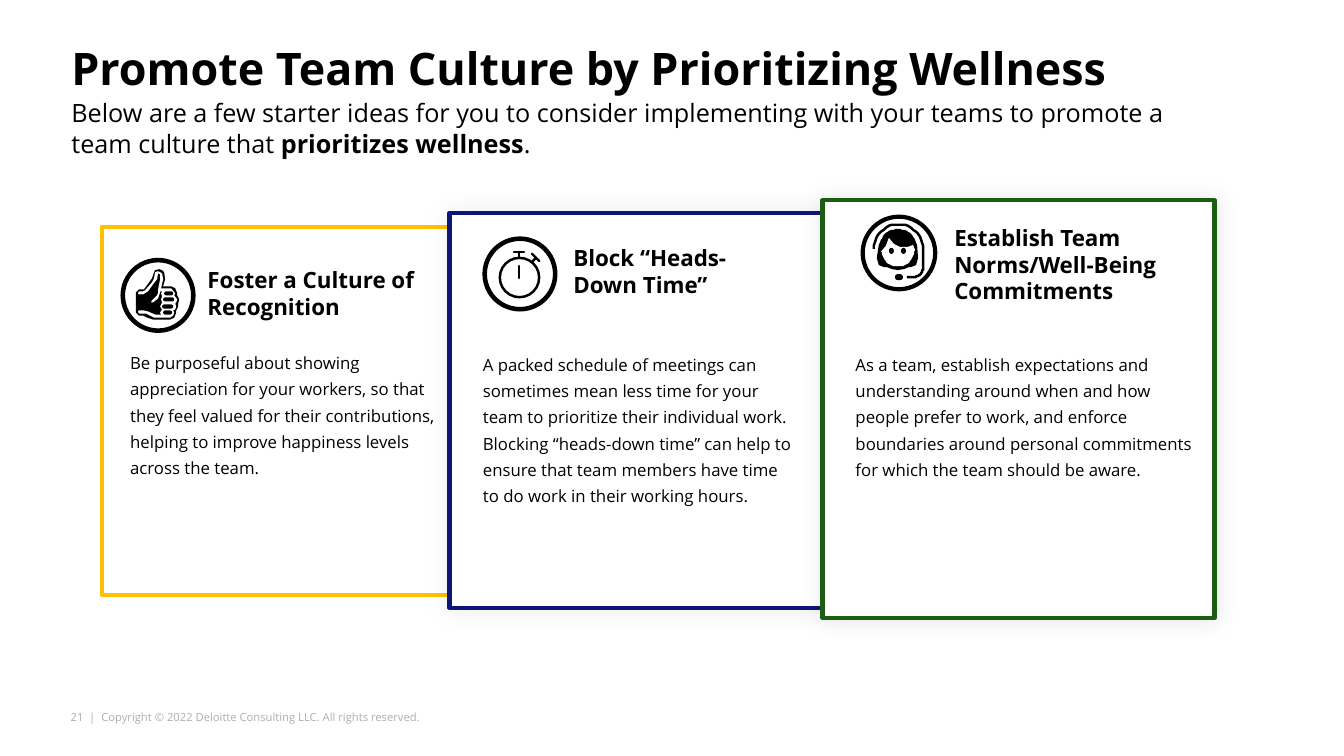
import math

import pptx
import pptx.dml.color
import pptx.enum.shapes
import pptx.oxml
import pptx.oxml.ns
import pptx.util

Cm = pptx.util.Cm
Pt = pptx.util.Pt
RGBColor = pptx.dml.color.RGBColor
SHAPE = pptx.enum.shapes.MSO_SHAPE

BLACK = RGBColor(0x00, 0x00, 0x00)
WHITE = RGBColor(0xFF, 0xFF, 0xFF)
GRAY = RGBColor(0xAE, 0xAE, 0xAE)
GOLD = RGBColor(0xFF, 0xC0, 0x00)
NAVY = RGBColor(0x0B, 0x16, 0x77)
GREEN = RGBColor(0x1B, 0x5D, 0x13)

FONT = "Open Sans"
UNIT = Cm(2.54) / 100  # icon grid step; each icon is 72 steps wide

HAND = [(55, 36), (55, 34), (53, 29), (49, 27), (41, 27), (43, 20), (42, 13),
        (40, 11), (37, 10), (33, 11), (32, 13), (30, 19), (28, 22), (22, 30),
        (17, 30), (14, 33), (14, 53), (17, 56), (21, 56), (25, 58), (31, 60),
        (48, 60), (52, 58), (54, 53), (54, 51), (56, 47), (56, 44), (57, 40)]
RIM = [(54, 43), (53, 44), (54, 47), (53, 50), (51, 51), (52, 53), (51, 56),
       (48, 58), (32, 58), (24, 54), (17, 54), (16, 52), (17, 51), (22, 51),
       (26, 52), (33, 55), (39, 55), (38, 53), (40, 50), (38, 47), (40, 43),
       (39, 40), (40, 37), (39, 34), (40, 32), (38, 32), (38, 33), (36, 39),
       (31, 43), (29, 43), (30, 41), (35, 36), (36, 33), (36, 30), (38, 20),
       (38, 15), (36, 14), (35, 20), (31, 25), (26, 32), (21, 35), (17, 35),
       (16, 34), (17, 32), (21, 32), (23, 31), (30, 23), (32, 19), (33, 13),
       (36, 12), (40, 14), (41, 20), (39, 29), (49, 29), (53, 34), (52, 36),
       (55, 40)]
NAILS = [(42, 32, 9, 4), (41, 38, 11, 4), (40, 45, 11, 4), (41, 51, 9, 4)]


def add_text(slide, box, parts, size, bold=False, color=BLACK, line=None,
             after=None, wrap=True):
    """Add one paragraph; every second part is bold when there are several."""
    frame = slide.shapes.add_textbox(*map(Cm, box)).text_frame
    frame.word_wrap = wrap
    frame.margin_left = frame.margin_right = 0
    frame.margin_top = frame.margin_bottom = 0
    para = frame.paragraphs[0]
    para.text = parts[0]
    for part in parts[1:]:
        para.add_run().text = part
    if line:
        para.line_spacing = line
    if after:
        para.space_after = Pt(after)
    for i, run in enumerate(para.runs):
        run.font.name = FONT
        run.font.size = Pt(size)
        run.font.bold = bold or i % 2 == 1
        run.font.color.rgb = color


def paint(shape, fill=None, edge=None, width=0):
    shape.shadow.inherit = False
    if fill is None:
        shape.fill.background()
    else:
        shape.fill.solid()
        shape.fill.fore_color.rgb = fill
    if edge is None:
        shape.line.fill.background()
    else:
        shape.line.color.rgb = edge
        shape.line.width = Pt(width)


def add_glow(shape, blur, alpha):
    """Give the shape a soft shadow with no offset; alpha is in percent."""
    space = pptx.oxml.ns.nsdecls("a")
    shade = pptx.oxml.parse_xml(
        f'<a:outerShdw {space} blurRad="{Pt(blur)}" dist="0" dir="0" '
        f'algn="ctr" rotWithShape="0"><a:srgbClr val="000000">'
        f'<a:alpha val="{alpha * 1000}"/></a:srgbClr></a:outerShdw>')
    shape.element.spPr.find(pptx.oxml.ns.qn("a:effectLst")).append(shade)


def add_card(slide, box, edge, glow):
    card = slide.shapes.add_shape(SHAPE.RECTANGLE, *map(Cm, box))
    paint(card, WHITE, edge, 3)
    if glow:
        add_glow(card, *glow)


def place(spot, x, y):
    """Turn a grid point of the icon at spot into slide lengths."""
    return Cm(spot[0]) + round(x * UNIT), Cm(spot[1]) + round(y * UNIT)


def add_part(slide, spot, kind, box, fill=BLACK, edge=None, width=0):
    x, y, w, h = box
    part = slide.shapes.add_shape(
        kind, *place(spot, x, y), round(w * UNIT), round(h * UNIT))
    if kind == SHAPE.ROUNDED_RECTANGLE:
        part.adjustments[0] = 0.5
    paint(part, fill, edge, width)


def add_ring(slide, spot, box, width):
    add_part(slide, spot, SHAPE.OVAL, box, None, BLACK, width)


def add_path(slide, spot, points, fill=None, width=0):
    """Draw a filled outline, or an open line when there is no fill."""
    form = slide.shapes.build_freeform(*points[0], scale=UNIT)
    form.add_line_segments(points[1:], close=fill is not None)
    shape = form.convert_to_shape(Cm(spot[0]), Cm(spot[1]))
    paint(shape, fill, None if fill is not None else BLACK, width)


def add_stroke(slide, spot, start, end):
    line = slide.shapes.add_connector(
        pptx.enum.shapes.MSO_CONNECTOR.STRAIGHT,
        *place(spot, *start), *place(spot, *end))
    line.line.color.rgb = BLACK
    line.line.width = Pt(1.75)
    props = line.element.spPr
    props.get_or_add_ln().set("cap", "rnd")
    props.append(pptx.oxml.parse_xml(
        f'<a:effectLst {pptx.oxml.ns.nsdecls("a")}/>'))


def arc(x, y, r, start, end):
    """List points on a circle, in degrees clockwise from the right."""
    turns = [math.radians(start + (end - start) * i / 24) for i in range(25)]
    return [(x + r * math.cos(t), y + r * math.sin(t)) for t in turns]


def draw_thumb(slide, spot):
    add_ring(slide, spot, (1, 1, 70, 70), 3.25)
    add_path(slide, spot, HAND, BLACK)
    add_path(slide, spot, RIM, WHITE)
    for nail in NAILS:
        add_part(slide, spot, SHAPE.ROUNDED_RECTANGLE, nail)


def draw_watch(slide, spot):
    add_ring(slide, spot, (1, 1, 70, 70), 3.25)
    add_ring(slide, spot, (16, 20, 39, 39), 1.75)
    for start, end in [((30, 14), (40, 14)), ((35, 14), (35, 20)),
                       ((35, 28), (35, 40)), ((48, 16), (55, 23)),
                       ((48, 24), (52, 20))]:
        add_stroke(slide, spot, start, end)


def draw_agent(slide, spot):
    add_ring(slide, spot, (0, 0, 72, 72), 3)
    band = arc(35.5, 32, 24.5, 180, 360) + arc(50, 50, 10, 0, 90) + [(44, 60)]
    add_path(slide, spot, band, width=1.75)
    hair = arc(35, 31, 19, 190, 350) + [
        (55, 41), (53, 48), (48, 50), (46, 50), (41, 52), (35, 53),
        (29, 52), (24, 50), (21, 50), (16, 48), (14, 41)]
    add_path(slide, spot, hair, BLACK)
    face = [(18, 35), (23, 29), (26, 21), (31, 27), (37, 30), (45, 30),
            (50, 28)] + arc(35, 33, 16.5, 0, 173)
    add_path(slide, spot, face, WHITE)
    for x in (26, 38):
        add_part(slide, spot, SHAPE.OVAL, (x, 31, 5, 6))
    add_part(slide, spot, SHAPE.ROUNDED_RECTANGLE, (32, 57, 8, 6))


CARDS = [
    ((2.57, 5.72, 9.25, 9.27), GOLD, None, draw_thumb, (3.07, 6.53),
     (5.23, 6.71, 5.44, 1.52), "Foster a Culture of Recognition",
     (3.28, 8.74, 7.85, 3.28),
     "Be purposeful about showing appreciation for your workers, so that they "
     "feel valued for their contributions, helping to improve happiness "
     "levels across the team."),
    ((11.33, 5.36, 9.53, 9.96), NAVY, (18, 7), draw_watch, (12.19, 5.99),
     (14.45, 6.15, 4.09, 1.52), "Block “Heads-Down Time”",
     (12.17, 8.79, 7.87, 3.94),
     "A packed schedule of meetings can sometimes mean less time for your "
     "team to prioritize their individual work. Blocking “heads-down time” "
     "can help to ensure that team members have time to do work in their "
     "working hours."),
    ((20.73, 5.05, 9.88, 10.52), GREEN, (16, 9), draw_agent, (21.74, 5.46),
     (24.05, 5.64, 6.25, 1.52), "Establish Team Norms/Well-Being Commitments",
     (21.56, 8.79, 8.61, 3.28),
     "As a team, establish expectations and understanding around when and how "
     "people prefer to work, and enforce boundaries around personal "
     "commitments for which the team should be aware."),
]


def main():
    deck = pptx.Presentation()
    deck.slide_width, deck.slide_height = Cm(33.87), Cm(19.05)
    slide = deck.slides.add_slide(deck.slide_layouts[6])
    add_text(slide, (1.78, 17.91, 8.86, 0.33),
             ["21  |  Copyright © 2022 Deloitte Consulting LLC. "
              "All rights reserved."], 8, color=GRAY, wrap=False)
    add_text(slide, (1.8, 2.46, 29.06, 1.55),
             ["Below are a few starter ideas for you to consider implementing "
              "with your teams to promote a team culture that ",
              "prioritizes wellness", "."], 18)
    add_text(slide, (1.8, 1.17, 28.37, 1.65),
             ["Promote Team Culture by Prioritizing Wellness"], 32, bold=True,
             line=0.9)
    for box, edge, glow, draw, spot, top, head, low, body in CARDS:
        add_card(slide, box, edge, glow)
        draw(slide, spot)
        add_text(slide, top, [head], 16, bold=True)
        add_text(slide, low, [body], 12, line=1.3, after=3)
    deck.save("out.pptx")


if __name__ == "__main__":
    main()
